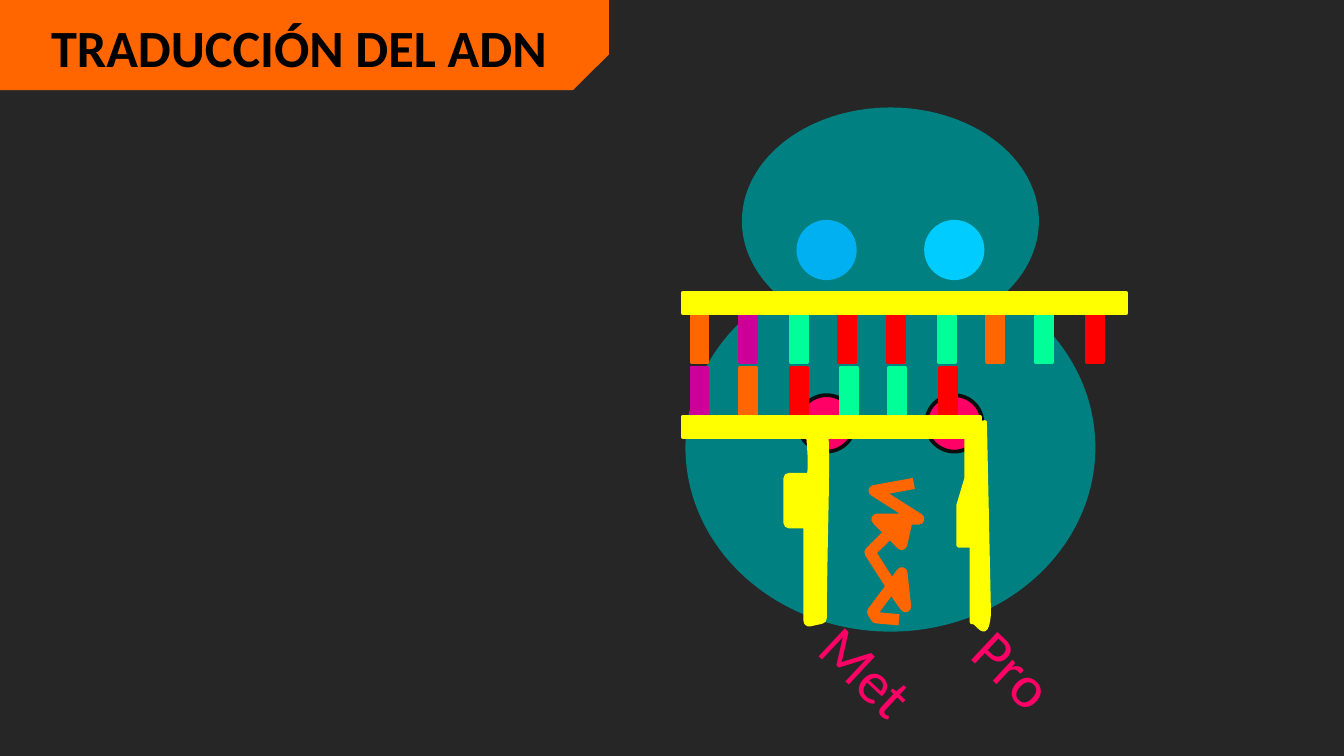
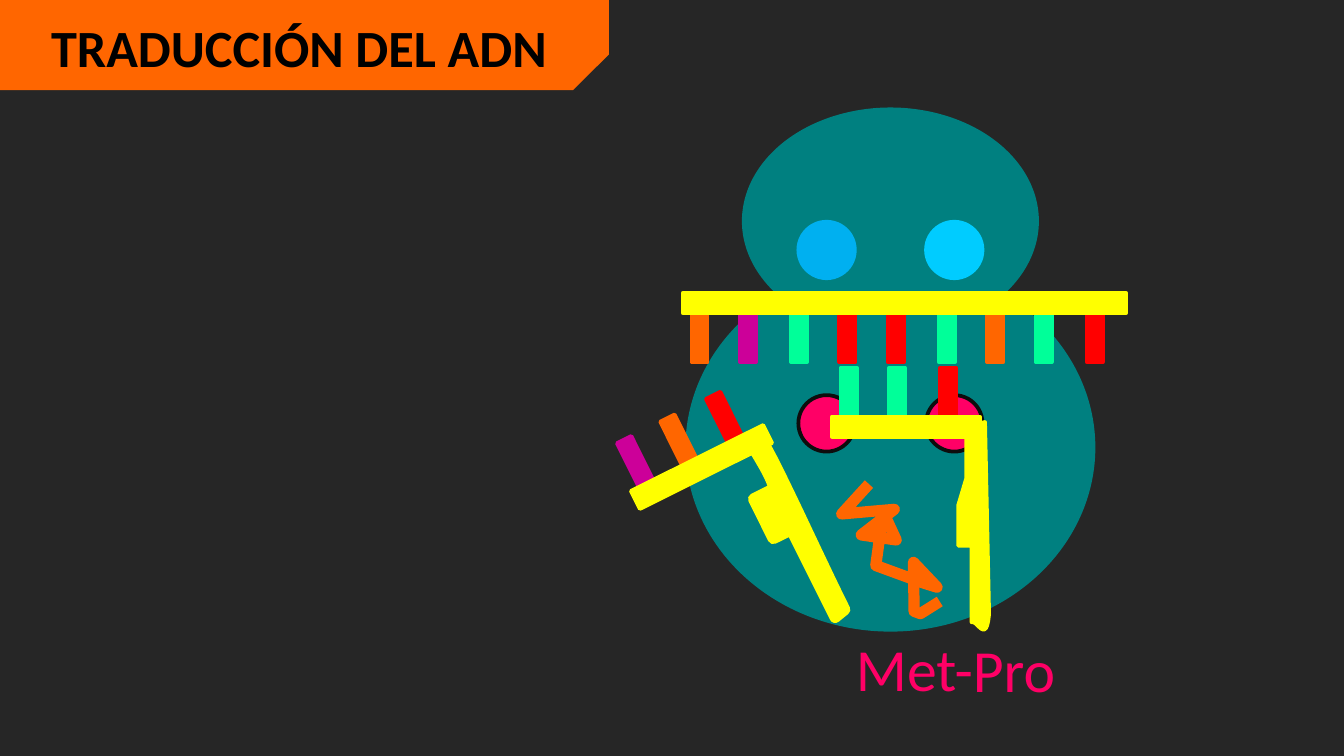
from math import cos, radians, sin

from pptx import Presentation
from pptx.dml.color import RGBColor
from pptx.enum import shapes, text
from pptx.util import Pt

PX = 9144  # EMU in one px; 100 px make an inch
SLIDE_WIDTH = 1000 * PX
SLIDE_HEIGHT = SLIDE_WIDTH * 9 // 16
FONT = "Calibri"
TITLE_ONLY_LAYOUT = 5

BACKGROUND = RGBColor(0x26, 0x26, 0x26)
BLACK = RGBColor(0, 0, 0)
SITE_OUTLINE = RGBColor(0x0D, 0x0D, 0x0D)
ORANGE = RGBColor(0xFF, 0x66, 0x00)
PURPLE = RGBColor(0xCC, 0x00, 0x99)
GREEN = RGBColor(0x00, 0xFF, 0x99)
RED = RGBColor(0xFF, 0x00, 0x00)
YELLOW = RGBColor(0xFF, 0xFF, 0x00)
TEAL = RGBColor(0x00, 0x80, 0x80)
BLUE = RGBColor(0x00, 0xB0, 0xF0)
CYAN = RGBColor(0x00, 0xCC, 0xFF)
PINK = RGBColor(0xFF, 0x00, 0x66)

# Boxes are left, top, width, height; places are left, top
BANNER = (0, 0, 453, 67)
TITLE = (28, 6, 393, 57)
RIBOSOME = (510, 80)
MESSENGER = (508, 218)
MET_TRNA = (508, 310)
RELEASED_MET_TRNA = (467, 340)
PRO_TRNA = (619, 310)
PROTEIN = (613, 392)
MET_LABEL = (598, 468, 97, 64)
JOINED_MET_LABEL = (627, 465, 109, 64)
PRO_LABEL = (714, 466, 82, 64)

CODON_WIDTH, BACKBONE_HEIGHT = 110, 15
BASE_LENGTH, BASE_THICKNESS = 51, 12
BASE_OFFSETS = (-13, 23, 61)
SITE_SIZE = 42

CODONS = ((ORANGE, PURPLE, GREEN), (RED, RED, GREEN), (ORANGE, GREEN, RED))
MET_ANTICODON = (PURPLE, ORANGE, RED)
PRO_ANTICODON = (GREEN, GREEN, RED)

PROTEIN_POINTS = [
    (0, 6), (8, 35), (26, 0), (29, 31), (46, 11), (23, 8), (54, 34),
    (85, 10), (92, 4), (67, 9), (98, 28), (102, 25), (102, 8),
]


def curve(start, control_1, control_2, end, steps=12):
    """Return points along a cubic Bézier curve."""
    points = []
    for step in range(steps + 1):
        t = step / steps
        weights = ((1 - t) ** 3, 3 * t * (1 - t) ** 2, 3 * t * t * (1 - t), t ** 3)
        points.append(tuple(
            sum(weight * value for weight, value in zip(weights, axis))
            for axis in zip(start, control_1, control_2, end)
        ))
    return points


MET_STEM_POINTS = [
    *curve((17, 4), (18, 16), (19, 29), (17, 36)),
    (0, 36), (0, 69), (15, 69), (15, 142),
    *curve((24, 140), (24, 94), (27, 22), (25, 0)),
]
PRO_STEM_POINTS = [
    (6, 3), (6, 42), (0, 62), (0, 92), (10, 92),
    *curve((10, 149), (14, 147), (21, 166), (23, 143)),
    (20, 0),
]


def style(shape, fill=None, line=None, line_width=2):
    shape.shadow.inherit = False
    if fill is None:
        shape.fill.background()
    else:
        shape.fill.solid()
        shape.fill.fore_color.rgb = fill
    if line is None:
        shape.line.fill.background()
    else:
        shape.line.color.rgb = line
        shape.line.width = Pt(line_width)


def add_preset(slide, kind, box, fill, line=None, rotation=0):
    shape = slide.shapes.add_shape(kind, *(length * PX for length in box))
    shape.rotation = rotation
    style(shape, fill, line)
    return shape


def add_outline(slide, points, left, top, fill, line, line_width, close=False):
    """Draw points given in px, kept to within a hundredth of a px."""
    start, *others = [(x * 100, y * 100) for x, y in points]
    builder = slide.shapes.build_freeform(*start, scale=PX / 100)
    builder.add_line_segments(others, close=close)
    shape = builder.convert_to_shape(left * PX, top * PX)
    style(shape, fill, line, line_width)
    return shape


def write(shape, words, size, color, bold=False):
    frame = shape.text_frame
    frame.text = words
    frame.word_wrap = False
    frame.auto_size = text.MSO_AUTO_SIZE.SHAPE_TO_FIT_TEXT
    frame.vertical_anchor = text.MSO_ANCHOR.TOP
    paragraph = frame.paragraphs[0]
    paragraph.alignment = text.PP_ALIGN.LEFT
    font = paragraph.runs[0].font
    font.name, font.size, font.bold = FONT, Pt(size), bold
    font.color.rgb = color


def tilt(parts, pivot, angle):
    """Turn the parts together, clockwise, about a pivot in px."""
    pivot_x, pivot_y = (value * PX for value in pivot)
    cosine, sine = cos(radians(angle)), sin(radians(angle))
    for part in parts:
        x = part.left + part.width / 2 - pivot_x
        y = part.top + part.height / 2 - pivot_y
        part.left = round(pivot_x + x * cosine - y * sine - part.width / 2)
        part.top = round(pivot_y + x * sine + y * cosine - part.height / 2)
        part.rotation = (part.rotation + angle) % 360


def add_title(slide):
    banner = add_preset(slide, shapes.MSO_SHAPE.SNIP_1_RECTANGLE, BANNER, ORANGE,
                        rotation=180)
    banner.adjustments[0] = 0.395
    banner.element.spPr.xfrm.set("flipH", "1")
    title = slide.shapes.title
    title.left, title.top, title.width, title.height = (length * PX for length in TITLE)
    write(title, "TRADUCCIÓN DEL ADN", 28, BLACK, bold=True)
    title.element.addprevious(banner.element)


def add_ribosome(slide, left, top):
    oval = shapes.MSO_SHAPE.OVAL
    add_preset(slide, oval, (left, top + 116, 305, 274), TEAL)
    add_preset(slide, oval, (left + 42, top, 221, 169), TEAL)
    sites = ((84, 85, BLUE, BLUE), (179, 85, CYAN, CYAN),
             (84, 214, PINK, SITE_OUTLINE), (179, 214, PINK, SITE_OUTLINE))
    for x, y, fill, line in sites:
        add_preset(slide, oval, (left + x, top + y, SITE_SIZE, SITE_SIZE), fill, line)


def add_triplet(slide, left, top, colors, base_drop, rotation):
    """Add three bases and the backbone that carries them."""
    rectangle = shapes.MSO_SHAPE.RECTANGLE
    parts = [
        add_preset(slide, rectangle,
                   (left + offset, top + base_drop, BASE_LENGTH, BASE_THICKNESS),
                   color, color, rotation)
        for offset, color in zip(BASE_OFFSETS, colors)
    ]
    backbone = (left, top, CODON_WIDTH, BACKBONE_HEIGHT)
    parts.append(add_preset(slide, rectangle, backbone, YELLOW, YELLOW))
    return parts


def add_messenger(slide, left, top):
    for index, codon in enumerate(CODONS):
        add_triplet(slide, left + index * CODON_WIDTH, top, codon, 20, 90)


def add_met_trna(slide, left, top, angle):
    """Add the first tRNA, turned about the centre of its backbone."""
    parts = add_triplet(slide, left, top, MET_ANTICODON, -17, 270)
    parts.append(add_outline(slide, MET_STEM_POINTS, left + 79, top + 10,
                             YELLOW, YELLOW, 6))
    tilt(parts, (left + CODON_WIDTH / 2, top + BACKBONE_HEIGHT / 2), angle)


def add_pro_trna(slide, left, top):
    add_triplet(slide, left, top, PRO_ANTICODON, -17, 270)
    add_outline(slide, PRO_STEM_POINTS, left + 94, top + 4, YELLOW, YELLOW, 2, close=True)


def add_protein(slide, left, top, rotation):
    chain = add_outline(slide, PROTEIN_POINTS, left, top, None, ORANGE, 6)
    chain.rotation = rotation


def add_amino_acid(slide, words, box, rotation):
    label = slide.shapes.add_textbox(*(length * PX for length in box))
    label.rotation = rotation
    write(label, words, 32, PINK)


def add_translation_slide(presentation, met, met_box, label_angle,
                          met_trna, trna_angle, protein_angle):
    slide = presentation.slides.add_slide(presentation.slide_layouts[TITLE_ONLY_LAYOUT])
    add_title(slide)
    add_ribosome(slide, *RIBOSOME)
    add_messenger(slide, *MESSENGER)
    add_protein(slide, *PROTEIN, protein_angle)
    add_amino_acid(slide, met, met_box, label_angle)
    add_amino_acid(slide, "Pro", PRO_LABEL, label_angle)
    add_met_trna(slide, *met_trna, trna_angle)
    add_pro_trna(slide, *PRO_TRNA)


def main():
    presentation = Presentation()
    presentation.slide_width = SLIDE_WIDTH
    presentation.slide_height = SLIDE_HEIGHT
    background = presentation.slide_master.background.fill
    background.solid()
    background.fore_color.rgb = BACKGROUND
    add_translation_slide(presentation, "Met", MET_LABEL, 43.1, MET_TRNA, 0, 95.1)
    add_translation_slide(presentation, "Met-", JOINED_MET_LABEL, 0,
                          RELEASED_MET_TRNA, -26.5, 57.8)
    presentation.save("out.pptx")


if __name__ == "__main__":
    main()
